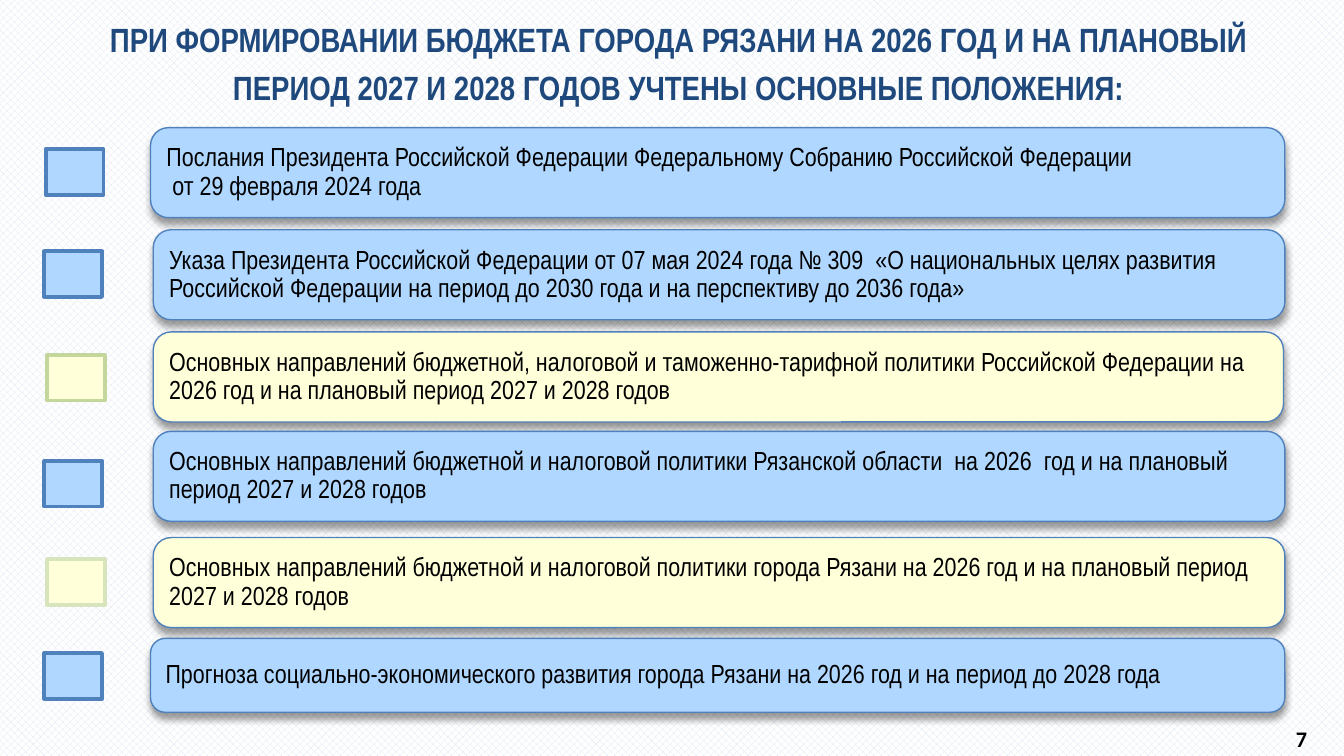
from dataclasses import dataclass

from lxml import etree
from pptx import Presentation
from pptx import util as u
from pptx.dml.color import RGBColor
from pptx.enum import dml, shapes, text
from pptx.oxml import ns


@dataclass(frozen=True)
class Theme:
    blue: str = "AFD7FF"
    yellow: str = "FFFFD9"
    outline: str = "4F81BD"
    green: str = "C3D69B"
    pale_green: str = "D7E4BD"
    heading: str = "1F497D"
    ink: str = "000000"
    check: str = "DCE6F2"
    paper: str = "FFFFFF"
    font: str = "Arial Narrow"
    number_font: str = "Calibri"
    title_size: float = 18
    item_size: float = 14
    number_size: float = 11.9


theme = Theme()


def add_run(para, words, font, size, color, bold=False):
    span = para.add_run()
    span.text = words
    span.font.name = font
    span.font.size = u.Pt(size)
    span.font.bold = bold
    span.font.color.rgb = RGBColor.from_string(color)


def add_box(kind, left, top, width, height, fill, line, weight):
    box = slide.shapes.add_shape(
        kind, u.Inches(left), u.Inches(top), u.Inches(width), u.Inches(height))
    box.shadow.inherit = False
    box.fill.solid()
    box.fill.fore_color.rgb = RGBColor.from_string(fill)
    box.line.color.rgb = RGBColor.from_string(line)
    box.line.width = u.Pt(weight)
    return box


deck = Presentation()
deck.slide_width = u.Inches(10)
deck.slide_height = u.Inches(10 * 9 / 16)
slide = deck.slides.add_slide(deck.slide_layouts[5])

backdrop = slide.background.fill
backdrop.patterned()
backdrop.pattern = dml.MSO_PATTERN.LARGE_CHECKER_BOARD
backdrop.fore_color.rgb = RGBColor.from_string(theme.check)
backdrop.back_color.rgb = RGBColor.from_string(theme.paper)

# Title
title = slide.shapes.title
title.left, title.top = u.Inches(0.55), u.Inches(0.1)
title.width, title.height = u.Inches(9), u.Inches(0.68)
title.text_frame.auto_size = text.MSO_AUTO_SIZE.NONE
title.text_frame.vertical_anchor = text.MSO_ANCHOR.MIDDLE
para = title.text_frame.paragraphs[0]
para.alignment = text.PP_ALIGN.CENTER
para.line_spacing = 1.2
add_run(para, "ПРИ ФОРМИРОВАНИИ БЮДЖЕТА ГОРОДА РЯЗАНИ НА 2026 ГОД И НА ПЛАНОВЫЙ "
        "ПЕРИОД 2027 И 2028 ГОДОВ УЧТЕНЫ ОСНОВНЫЕ ПОЛОЖЕНИЯ:",
        theme.font, theme.title_size, theme.heading, bold=True)

# Each provision: left, top, width, height, marker left, marker top,
# fill, marker outline, lines of text
provisions = [
    (1.12, 0.95, 8.44, 0.67, 0.34, 1.11, theme.blue, theme.outline,
     ["Послания Президента Российской Федерации Федеральному Собранию "
      "Российской Федерации", " от 29 февраля 2024 года"]),
    (1.14, 1.71, 8.42, 0.67, 0.33, 1.87, theme.blue, theme.outline,
     ["Указа Президента Российской Федерации от 07 мая 2024 года № 309  "
      "«О национальных целях развития Российской Федерации на период "
      "до 2030 года и на перспективу до 2036 года»"]),
    (1.14, 2.47, 8.41, 0.67, 0.35, 2.64, theme.yellow, theme.green,
     ["Основных направлений бюджетной, налоговой и таможенно-тарифной политики "
      "Российской Федерации на 2026 год и на плановый период 2027 и 2028 годов"]),
    (1.14, 3.21, 8.42, 0.67, 0.33, 3.43, theme.blue, theme.outline,
     ["Основных направлений бюджетной и налоговой политики Рязанской области  "
      "на 2026  год и на плановый период 2027 и 2028 годов"]),
    (1.14, 4.00, 8.42, 0.67, 0.35, 4.16, theme.yellow, theme.pale_green,
     ["Основных направлений бюджетной и налоговой политики города Рязани "
      "на 2026 год и на плановый период 2027 и 2028 годов"]),
    (1.12, 4.75, 8.44, 0.55, 0.33, 4.86, theme.blue, theme.outline,
     ["Прогноза социально-экономического развития города Рязани на 2026 год "
      "и на период до 2028 года"]),
]

for (left, top, width, height, marker_left, marker_top,
     fill, marker_line, lines) in provisions:
    add_box(shapes.MSO_SHAPE.RECTANGLE, marker_left, marker_top, 0.43, 0.34,
            fill, marker_line, 2)
    panel = add_box(shapes.MSO_SHAPE.ROUNDED_RECTANGLE, left, top, width, height,
                    fill, theme.outline, 0.75)
    panel.adjustments[0] = 0.2

    effects = panel.element.spPr.find(ns.qn("a:effectLst"))
    shadow = etree.SubElement(
        effects, ns.qn("a:outerShdw"), blurRad=str(u.Pt(4)), dist=str(u.Pt(3)),
        dir="5400000", rotWithShape="0")
    shade = etree.SubElement(shadow, ns.qn("a:srgbClr"), val=theme.ink)
    etree.SubElement(shade, ns.qn("a:alpha"), val="40000")

    frame = panel.text_frame
    frame.word_wrap = True
    frame.vertical_anchor = text.MSO_ANCHOR.MIDDLE
    frame.margin_left = frame.margin_right = u.Inches(0.08)
    frame.margin_top = frame.margin_bottom = u.Inches(0.12)
    para = frame.paragraphs[0]
    para.alignment = text.PP_ALIGN.LEFT
    para.line_spacing = 0.9
    for index, words in enumerate(lines):
        if index:
            para.add_line_break()
        add_run(para, words, theme.font, theme.item_size, theme.ink)

# Page number
number = slide.shapes.add_textbox(
    u.Inches(9.33), u.Inches(5.35), u.Inches(0.67), u.Inches(0.26))
number.text_frame.word_wrap = True
para = number.text_frame.paragraphs[0]
para.alignment = text.PP_ALIGN.CENTER
add_run(para, " 7", theme.number_font, theme.number_size, theme.ink, bold=True)

deck.save("out.pptx")
